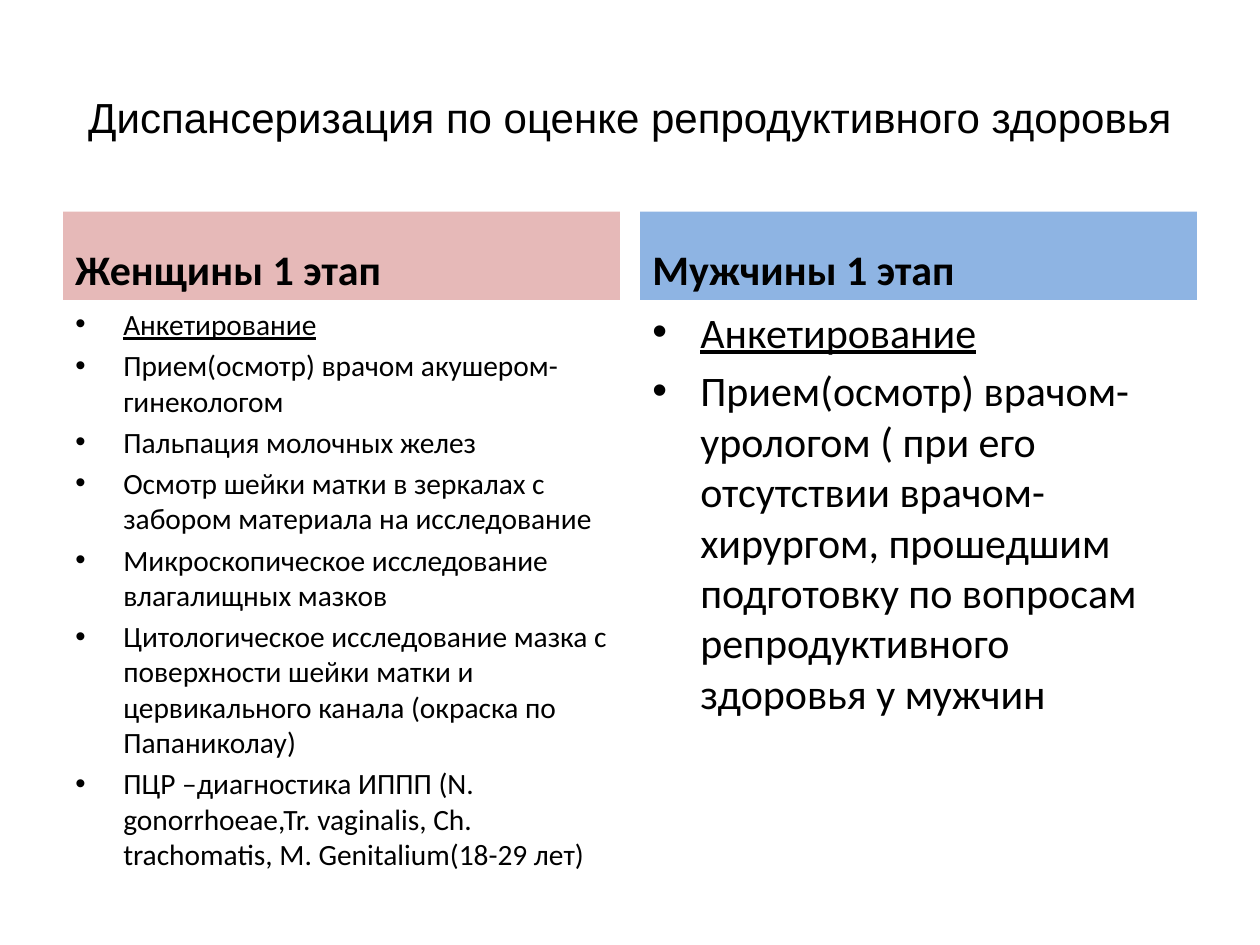
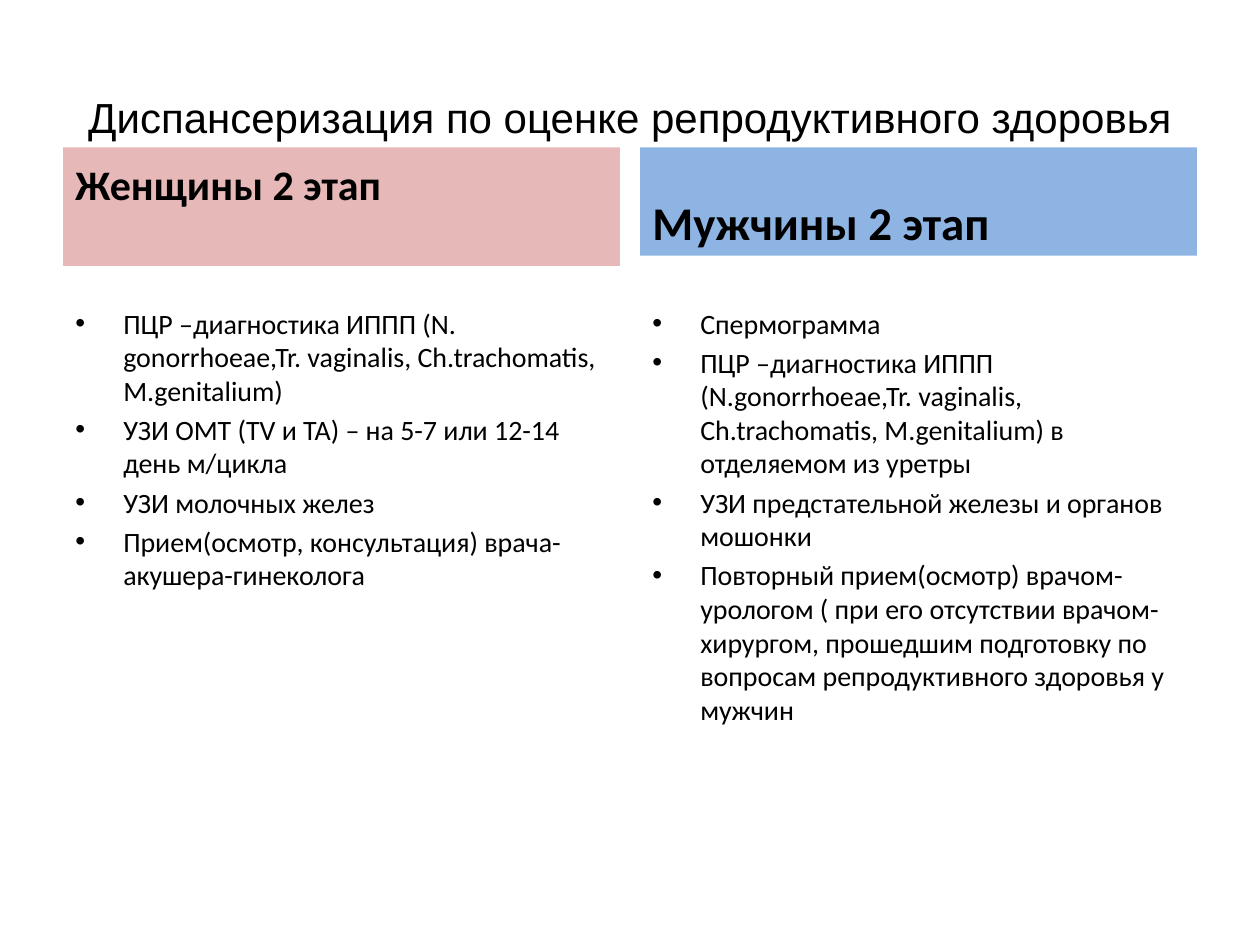
from lxml.etree import SubElement
from pptx import Presentation
from pptx.dml.color import RGBColor
from pptx.enum.shapes import MSO_SHAPE
from pptx.enum.text import MSO_ANCHOR, PP_ALIGN
from pptx.oxml.ns import qn
from pptx.util import Inches, Pt

COLORS = {"text": "000000", "women": "E6B9B8", "men": "8EB4E3"}
TITLE = "Диспансеризация по оценке репродуктивного здоровья"
SURVEY = "Анкетирование"
SLIDES = [
    {
        "band_top": 1.68,
        "columns": [
            {
                "heading": "Женщины 1 этап", "color": "women",
                "heading_size": 24, "band_height": 0.7, "lift": 0, "size": 16.8,
                "items": [
                    SURVEY,
                    "Прием(осмотр) врачом акушером- гинекологом",
                    "Пальпация молочных желез",
                    "Осмотр шейки матки в зеркалах с забором материала на исследование",
                    "Микроскопическое исследование влагалищных мазков",
                    "Цитологическое исследование мазка с поверхности шейки матки и "
                    "цервикального канала (окраска по Папаниколау)",
                    "ПЦР –диагностика ИППП (N. gonorrhoeae,Tr. vaginalis, "
                    "Ch. trachomatis, M. Genitalium(18-29 лет)",
                ],
            },
            {
                "heading": "Мужчины 1 этап", "color": "men",
                "heading_size": 24, "band_height": 0.7, "lift": 0, "size": 24,
                "items": [
                    SURVEY,
                    "Прием(осмотр) врачом- урологом ( при его отсутствии "
                    "врачом-хирургом, прошедшим подготовку по вопросам "
                    "репродуктивного здоровья у мужчин",
                ],
            },
        ],
    },
    {
        "band_top": 1.17,
        "columns": [
            {
                "heading": "Женщины 2 этап", "color": "women",
                "heading_size": 24, "band_height": 0.94, "lift": 0.4, "size": 16,
                "items": [
                    "ПЦР –диагностика ИППП (N. gonorrhoeae,Tr. vaginalis, "
                    "Ch.trachomatis, M.genitalium)",
                    "УЗИ ОМТ (TV и TA) – на 5-7 или 12-14 день м/цикла",
                    "УЗИ молочных желез",
                    "Прием(осмотр, консультация) врача-акушера-гинеколога",
                ],
            },
            {
                "heading": "Мужчины 2 этап", "color": "men",
                "heading_size": 26.8, "band_height": 0.86, "lift": 0, "size": 16,
                "items": [
                    "Спермограмма",
                    "ПЦР –диагностика ИППП (N.gonorrhoeae,Tr. vaginalis, "
                    "Ch.trachomatis, M.genitalium) в отделяемом из уретры",
                    "УЗИ предстательной железы и органов мошонки",
                    "Повторный прием(осмотр) врачом- урологом ( при его отсутствии "
                    "врачом-хирургом, прошедшим подготовку по вопросам "
                    "репродуктивного здоровья у мужчин",
                ],
            },
        ],
    },
]

SLIDE_WIDTH, SLIDE_HEIGHT = 10, 7.5
MARGIN, GUTTER = 0.5, 0.16
CONTENT_WIDTH = SLIDE_WIDTH - 2 * MARGIN
COLUMN_WIDTH = (CONTENT_WIDTH - GUTTER) / 2
TITLE_TOP, TITLE_HEIGHT = 0.3, 1.25
LIST_TOP, LIST_HEIGHT = 2.38, 4.32
INDENT = Inches(0.38)
PADDING = 0.05


def color(name):
    return RGBColor.from_string(COLORS[name])


def add_box(slide, left, top, width, height, anchor, fill=None):
    box = tuple(Inches(length) for length in (left, top, width, height))
    if fill:
        shape = slide.shapes.add_shape(MSO_SHAPE.RECTANGLE, *box)
        shape.shadow.inherit = False
        shape.fill.solid()
        shape.fill.fore_color.rgb = color(fill)
        shape.line.fill.background()
    else:
        shape = slide.shapes.add_textbox(*box)
    frame = shape.text_frame
    frame.word_wrap = True
    frame.vertical_anchor = anchor
    return frame


def write(paragraph, text, size, font="Calibri", bold=False, align=PP_ALIGN.LEFT):
    paragraph.text = text
    paragraph.alignment = align
    paragraph.font.name = font
    paragraph.font.size = Pt(size)
    paragraph.font.bold = bold
    paragraph.font.color.rgb = color("text")


def add_bullet(paragraph):
    properties = paragraph._p.get_or_add_pPr()
    properties.set("marL", str(INDENT))
    properties.set("indent", str(-INDENT))
    bullet_font = SubElement(properties, qn("a:buFont"))
    bullet_font.set("typeface", "Arial")
    bullet = SubElement(properties, qn("a:buChar"))
    bullet.set("char", "•")
    default_run = properties.find(qn("a:defRPr"))
    properties.append(default_run)


def add_list(slide, left, column):
    frame = add_box(slide, left, LIST_TOP, COLUMN_WIDTH, LIST_HEIGHT, MSO_ANCHOR.TOP)
    for index, item in enumerate(column["items"]):
        paragraph = frame.add_paragraph() if index else frame.paragraphs[0]
        write(paragraph, item, column["size"])
        paragraph.font.underline = item == SURVEY
        paragraph.space_before = Pt(0.2 * column["size"] if index else 0)
        add_bullet(paragraph)


def add_column(slide, index, band_top, column):
    left = MARGIN + index * (COLUMN_WIDTH + GUTTER)
    frame = add_box(slide, left, band_top, COLUMN_WIDTH, column["band_height"],
                    MSO_ANCHOR.BOTTOM, column["color"])
    frame.margin_bottom = Inches(PADDING + column["lift"])
    write(frame.paragraphs[0], column["heading"], column["heading_size"], bold=True)
    add_list(slide, left, column)


def main():
    """Build the two screening slides and save the presentation."""
    presentation = Presentation()
    presentation.slide_width = Inches(SLIDE_WIDTH)
    presentation.slide_height = Inches(SLIDE_HEIGHT)
    for content in SLIDES:
        slide = presentation.slides.add_slide(presentation.slide_layouts[6])
        frame = add_box(slide, MARGIN, TITLE_TOP, CONTENT_WIDTH, TITLE_HEIGHT,
                        MSO_ANCHOR.MIDDLE)
        write(frame.paragraphs[0], TITLE, 24, "Arial", align=PP_ALIGN.CENTER)
        for index, column in enumerate(content["columns"]):
            add_column(slide, index, content["band_top"], column)
    presentation.save("out.pptx")


if __name__ == "__main__":
    main()
